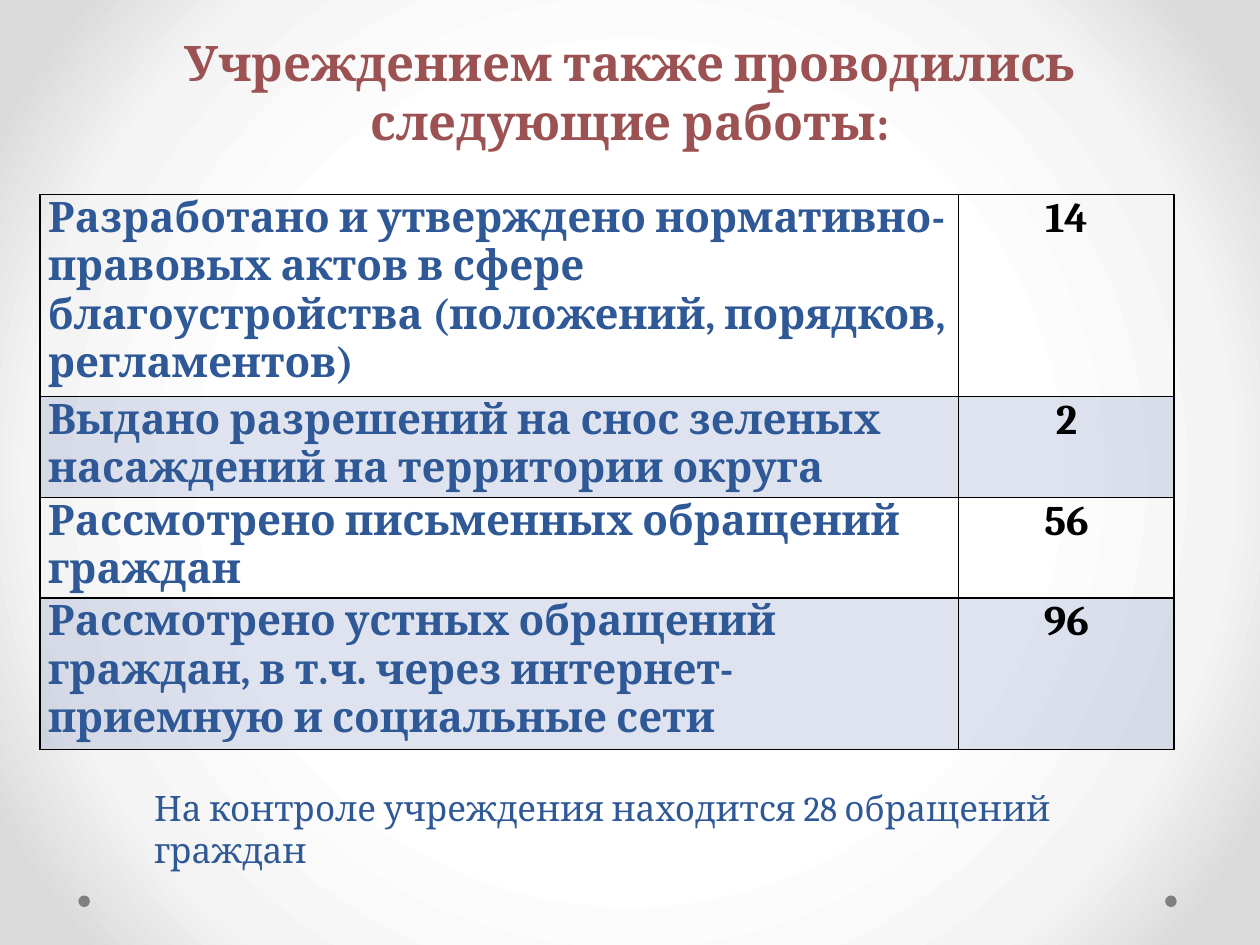
from dataclasses import dataclass

from pptx import Presentation
from pptx.dml.color import RGBColor
from pptx.enum import shapes, text
from pptx.oxml import parse_xml
from pptx.oxml.ns import nsdecls
from pptx.util import Pt


@dataclass(frozen=True)
class Theme:
    font: str = "Cambria"
    title: str = "9C5252"
    blue: str = "2F5897"
    black: str = "000000"
    band: str = "6076B4"
    dot: str = "808080"
    big: float = 28
    mid: float = 24
    small: float = 20


THEME = Theme()
STOPS = ((50, "FFFFFF"), (76, "F4F4F4"), (92, "DADADA"))
ROWS = (  # label, value, lines of text
    ("Разработано и утверждено нормативно-правовых актов в сфере "
     "благоустройства (положений, порядков, регламентов)", "14", 4),
    ("Выдано разрешений на снос зеленых насаждений на территории округа", "2", 2),
    ("Рассмотрено письменных обращений граждан", "56", 2),
    ("Рассмотрено устных обращений граждан, в т.ч. через "
     "интернет-приемную и социальные сети", "96", 3),
)
SHARES = (0.81, 0.19)
LEFT, MID = text.PP_ALIGN.LEFT, text.PP_ALIGN.CENTER


def apply(item, form):
    for key, value in form.items():
        setattr(item, key, value)


def write(frame, words, size, color, bold, align):
    para = frame.paragraphs[0]
    para.alignment = align
    run = para.add_run()
    run.text = words
    apply(run.font, {"name": THEME.font, "size": Pt(size), "bold": bold})
    run.font.color.rgb = RGBColor.from_string(color)


def backdrop(slide):
    """Fill the slide with a radial gradient around its centre."""
    stops = "".join(
        f'<a:gs pos="{pos * 1000}"><a:srgbClr val="{color}"/></a:gs>'
        for pos, color in STOPS)
    bg = parse_xml(
        f'<p:bg {nsdecls("p", "a")}><p:bgPr><a:gradFill rotWithShape="1">'
        f'<a:gsLst>{stops}</a:gsLst><a:path path="circle">'
        '<a:fillToRect l="50000" t="50000" r="50000" b="50000"/></a:path>'
        '</a:gradFill><a:effectLst/></p:bgPr></p:bg>')
    slide.element.cSld.insert(0, bg)


def dots(slide, box):
    """Put one dot at each end of the box."""
    left, top, width, size = box
    for x in (left, left + width - size):
        dot = slide.shapes.add_shape(
            shapes.MSO_SHAPE.OVAL, Pt(x), Pt(top), Pt(size), Pt(size))
        dot.shadow.inherit = False
        dot.fill.solid()
        dot.fill.fore_color.rgb = RGBColor.from_string(THEME.dot)
        dot.line.fill.background()


def label(slide, box, words, size, color, bold=False, align=LEFT):
    frame = slide.shapes.add_textbox(*map(Pt, box)).text_frame
    frame.word_wrap = True
    write(frame, words, size, color, bold, align)


def edge(cell):
    props = cell._tc.get_or_add_tcPr()
    for spot, side in enumerate("LRTB"):
        props.insert(spot, parse_xml(
            f'<a:ln{side} {nsdecls("a")} w="12700"><a:solidFill>'
            f'<a:srgbClr val="{THEME.black}"/></a:solidFill></a:ln{side}>'))


def shade(cell, band):
    if not band:
        cell.fill.background()
        return
    cell.fill.solid()
    cell.fill.fore_color.rgb = RGBColor.from_string(THEME.band)
    color = cell._tc.tcPr.find(".//{*}srgbClr")
    color.append(parse_xml(f'<a:alpha {nsdecls("a")} val="20000"/>'))


def works(slide, box):
    """Table of works; row heights follow the number of text lines."""
    height = box[3]
    grid = slide.shapes.add_table(len(ROWS), len(SHARES), *map(Pt, box)).table
    apply(grid, {"first_row": False, "horz_banding": False})
    for col, share in zip(grid.columns, SHARES):
        col.width = Pt(box[2] * share)
    total = sum(row[2] for row in ROWS)
    pads = {"margin_left": Pt(4.5), "margin_right": Pt(4.5),
            "margin_top": 0, "margin_bottom": 0}
    looks = ((THEME.blue, LEFT), (THEME.black, MID))
    for i, (name, count, lines) in enumerate(ROWS):
        grid.rows[i].height = Pt(height * lines / total)
        for j, (words, (color, align)) in enumerate(zip((name, count), looks)):
            cell = grid.cell(i, j)
            apply(cell, pads)
            write(cell.text_frame, words, THEME.mid, color, True, align)
            shade(cell, i % 2)
            edge(cell)


def main():
    deck = Presentation()
    apply(deck, {"slide_width": Pt(720), "slide_height": Pt(540)})
    slide = deck.slides.add_slide(deck.slide_layouts[6])
    backdrop(slide)
    dots(slide, (44.8, 511.7, 627.6, 6.6))
    label(slide, (14, 15, 692, 75), "Учреждением также проводились следующие работы:",
          THEME.big, THEME.title, True, MID)
    works(slide, (23, 111.3, 648, 317))
    label(slide, (81, 446, 590, 32),
          "На контроле учреждения находится 28 обращений граждан",
          THEME.small, THEME.blue)
    deck.save("out.pptx")


if __name__ == "__main__":
    main()
